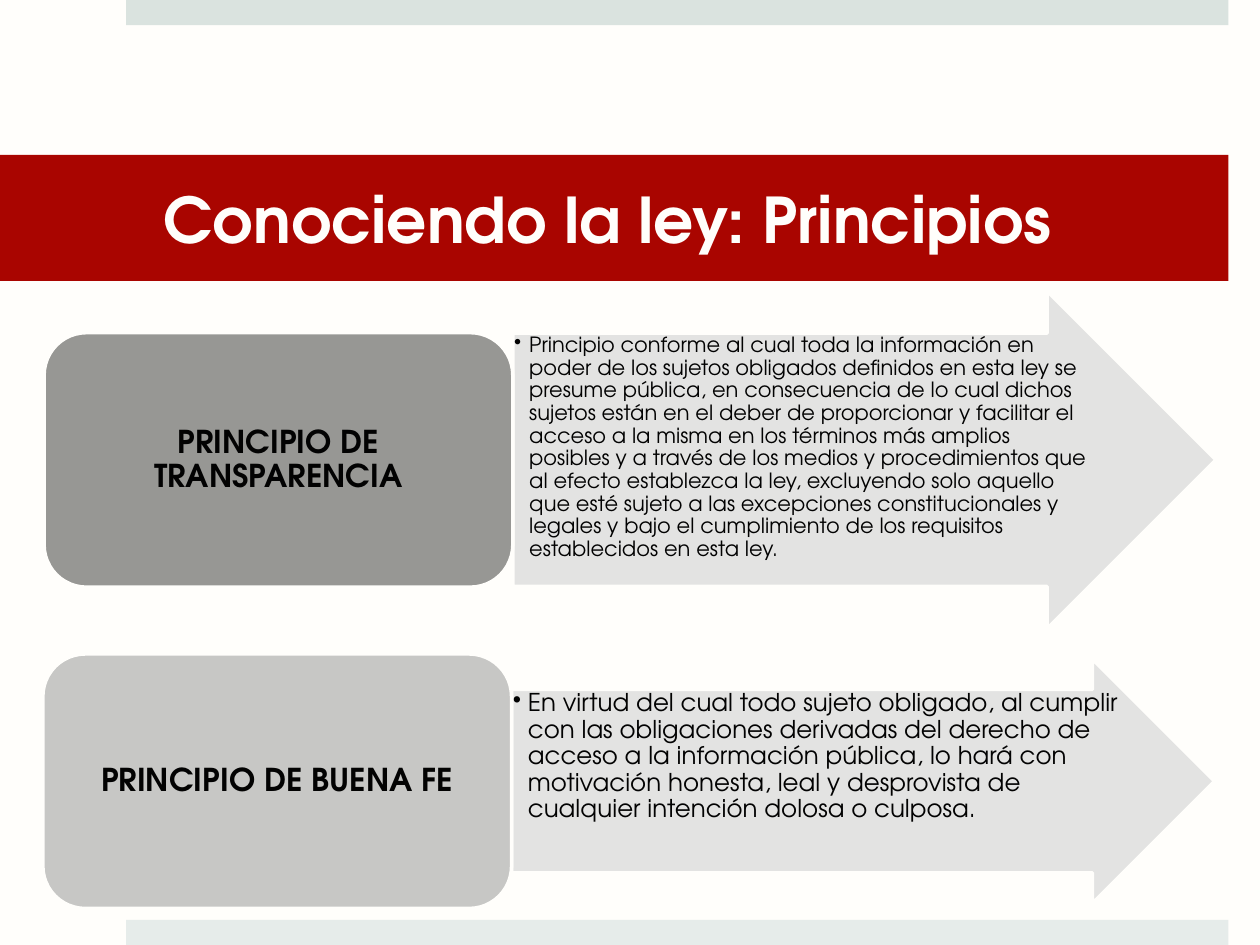
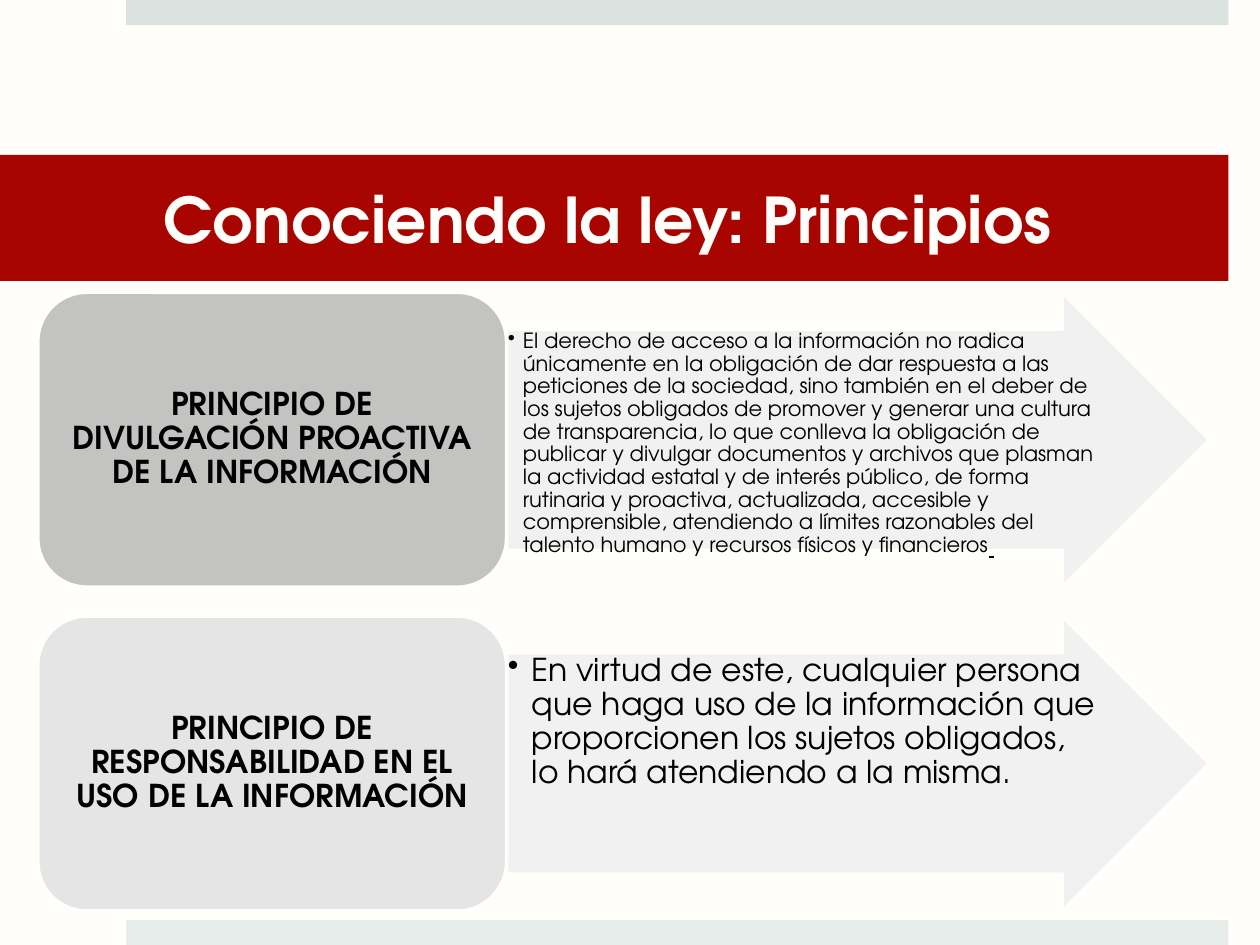
from dataclasses import dataclass

from lxml import etree
from pptx import Presentation
from pptx.dml.color import RGBColor
from pptx.enum.shapes import MSO_SHAPE
from pptx.enum.text import MSO_ANCHOR, PP_ALIGN
from pptx.oxml.ns import qn
from pptx.util import Pt

RECT = MSO_SHAPE.RECTANGLE
ROUNDED = MSO_SHAPE.ROUNDED_RECTANGLE
ARROW = MSO_SHAPE.RIGHT_ARROW
TOP, MIDDLE = MSO_ANCHOR.TOP, MSO_ANCHOR.MIDDLE
LEFT, CENTER = PP_ALIGN.LEFT, PP_ALIGN.CENTER

EMU_PER_PX = 9144  # 100 px to the inch
LABEL_WIDTH, ARROW_WIDTH = 372, 558


@dataclass(frozen=True)
class Theme:
    font: str = "TeX Gyre Adventor"
    paper: str = "FFFEFB"
    ink: str = "020202"
    top_band: str = "DAE3DF"
    bottom_band: str = "E6ECEA"
    title_band: str = "A90500"
    title_size: int = 36
    label_size: int = 18
    outline_width: int = 2
    arrow_opacity: int = 90
    line_spacing: float = 0.9


THEME = Theme()


@dataclass(frozen=True)
class Principle:
    label: str
    text: str
    left: int
    middle: int
    label_height: int
    arrow_height: int
    label_fill: str
    arrow_fill: str
    size: int
    indent: int = 12
    underlined_end: str = ""


TITLE = "Conociendo la ley: Principios"

SLIDES = [
    [
        Principle(
            "PRINCIPIO DE TRANSPARENCIA",
            "Principio conforme al cual toda la información en poder de los sujetos "
            "obligados definidos en esta ley se presume pública, en consecuencia de lo "
            "cual dichos sujetos están en el deber de proporcionar y facilitar el acceso "
            "a la misma en los términos más amplios posibles y a través de los medios y "
            "procedimientos que al efecto establezca la ley, excluyendo solo aquello que "
            "esté sujeto a las excepciones constitucionales y legales y bajo el "
            "cumplimiento de los requisitos establecidos en esta ley.",
            left=35, middle=365, label_height=202, arrow_height=268,
            label_fill="979794", arrow_fill="E1E1E0", size=12),
        Principle(
            "PRINCIPIO DE BUENA FE",
            "En virtud del cual todo sujeto obligado, al cumplir con las obligaciones "
            "derivadas del derecho de acceso a la información pública, lo hará con "
            "motivación honesta, leal y desprovista de cualquier intención dolosa o "
            "culposa.",
            left=34, middle=620, label_height=202, arrow_height=194,
            label_fill="C7C7C5", arrow_fill="E1E1E0", size=14),
    ],
    [
        Principle(
            "PRINCIPIO DE DIVULGACIÓN PROACTIVA DE LA INFORMACIÓN",
            "El derecho de acceso a la información no radica únicamente en la obligación "
            "de dar respuesta a las peticiones de la sociedad, sino también en el deber "
            "de los sujetos obligados de promover y generar una cultura de "
            "transparencia, lo que conlleva la obligación de publicar y divulgar "
            "documentos y archivos que plasman la actividad estatal y de interés "
            "público, de forma rutinaria y proactiva, actualizada, accesible y "
            "comprensible, atendiendo a límites razonables del talento humano y recursos "
            "físicos y financieros",
            left=30, middle=349, label_height=234, arrow_height=234,
            label_fill="C3C4C2", arrow_fill="F0F0F0", size=12, underlined_end=" "),
        Principle(
            "PRINCIPIO DE RESPONSABILIDAD EN EL USO DE LA INFORMACIÓN",
            "En virtud de este, cualquier persona que haga uso de la información que "
            "proporcionen los sujetos obligados, lo hará atendiendo a la misma.",
            left=30, middle=606, label_height=234, arrow_height=234,
            label_fill="E4E5E4", arrow_fill="F0F0F0", size=18, indent=19),
    ],
]


def px(length):
    return length * EMU_PER_PX


def add_box(page, kind, left, top, width, height, fill, outline=None, opacity=None):
    box = page.shapes.add_shape(kind, px(left), px(top), px(width), px(height))
    box.shadow.inherit = False
    box.fill.solid()
    box.fill.fore_color.rgb = RGBColor.from_string(fill)
    if opacity:
        color = box.fill._xPr.find(".//" + qn("a:srgbClr"))
        etree.SubElement(color, qn("a:alpha")).set("val", str(opacity * 1000))
    if outline:
        box.line.color.rgb = RGBColor.from_string(outline)
        box.line.width = Pt(THEME.outline_width)
    else:
        box.line.fill.background()
    return box


def add_span(para, text, size, color=THEME.ink, bold=False, underline=None):
    span = para.add_run()
    span.text = text
    font = span.font
    font.name, font.size = THEME.font, Pt(size)
    font.bold, font.underline = bold, underline
    font.color.rgb = RGBColor.from_string(color)


def write(box, text, *, size, margins, color=THEME.ink, bold=False, align=LEFT,
          anchor=MIDDLE, spacing=None, bullet_indent=None):
    frame = box.text_frame
    frame.word_wrap = True
    frame.vertical_anchor = anchor
    (frame.margin_left, frame.margin_top,
     frame.margin_right, frame.margin_bottom) = map(px, margins)
    para = frame.paragraphs[0]
    para.alignment = align
    if spacing:
        para.line_spacing = spacing
    if bullet_indent:
        properties = para._p.get_or_add_pPr()
        properties.set("marL", str(px(bullet_indent)))
        properties.set("indent", str(-px(bullet_indent)))
        etree.SubElement(properties, qn("a:buChar")).set("char", "•")
    add_span(para, text, size, color, bold)
    return para


def add_page(deck):
    page = deck.slides.add_slide(deck.slide_layouts[6])
    background = page.background.fill
    background.solid()
    background.fore_color.rgb = RGBColor.from_string(THEME.paper)
    # Bands and title
    add_box(page, RECT, 100, 0, 875, 20, THEME.top_band)
    add_box(page, RECT, 100, 730, 875, 20, THEME.bottom_band)
    band = add_box(page, RECT, 0, 123, 975, 100, THEME.title_band)
    write(band, TITLE, size=THEME.title_size, color=THEME.paper, bold=True,
          margins=(130, 5, 30, 5))
    return page


def add_principle(page, item):
    # Arrow with the explanation
    arrow = add_box(page, ARROW, item.left + LABEL_WIDTH,
                    item.middle - item.arrow_height // 2, ARROW_WIDTH,
                    item.arrow_height, item.arrow_fill, THEME.paper,
                    THEME.arrow_opacity)
    arrow.adjustments[0], arrow.adjustments[1] = 0.75, 0.5
    para = write(arrow, item.text, size=item.size, margins=(1, 1, 1, 1), anchor=TOP,
                 spacing=THEME.line_spacing, bullet_indent=item.indent)
    if item.underlined_end:
        add_span(para, item.underlined_end, item.size, bold=True, underline=True)
    # Name of the principle
    label = add_box(page, ROUNDED, item.left, item.middle - item.label_height // 2,
                    LABEL_WIDTH, item.label_height, item.label_fill, THEME.paper)
    write(label, item.label, size=THEME.label_size, bold=True, align=CENTER,
          margins=(7, 4, 7, 4), spacing=THEME.line_spacing)


def main():
    deck = Presentation()
    deck.slide_width, deck.slide_height = px(1000), px(750)
    for principles in SLIDES:
        page = add_page(deck)
        for item in principles:
            add_principle(page, item)
    deck.save("out.pptx")


if __name__ == "__main__":
    main()
